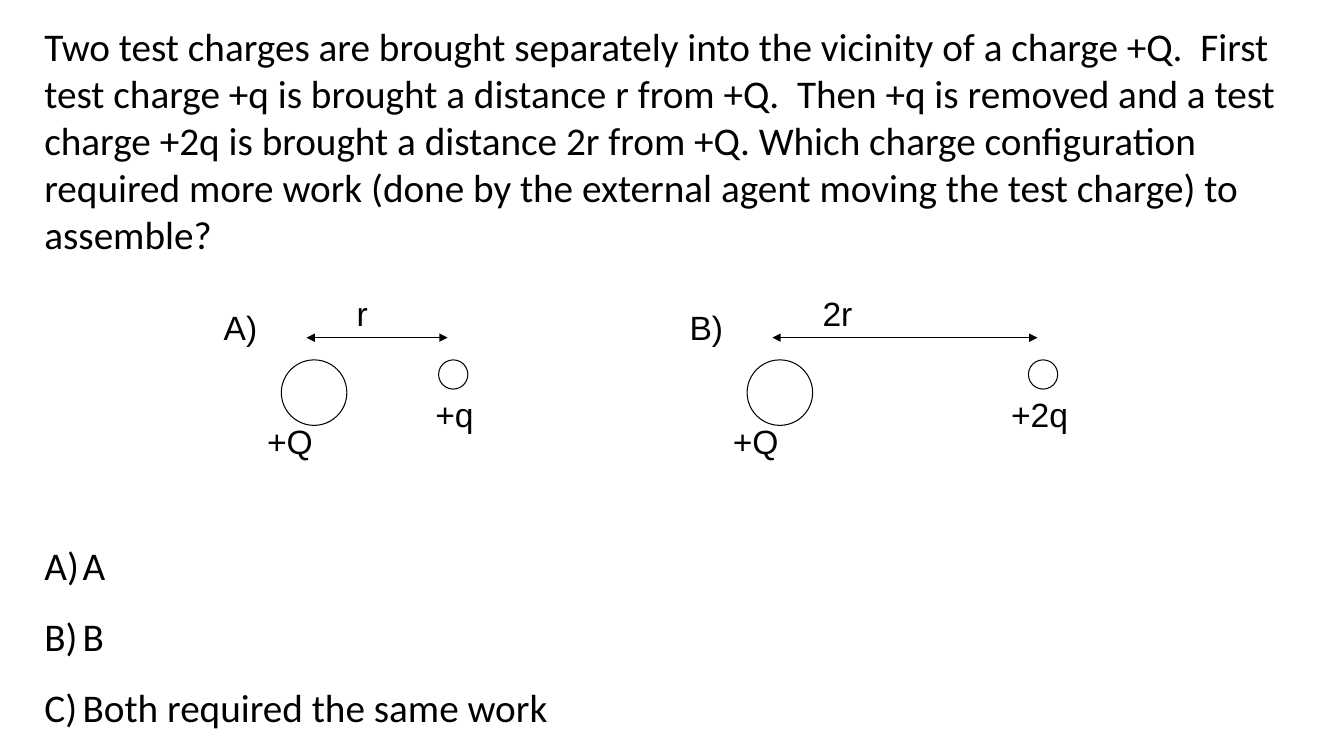
from lxml.etree import SubElement
from pptx import Presentation
from pptx.dml.color import RGBColor
from pptx.enum.shapes import MSO_CONNECTOR as Connector, MSO_SHAPE as Preset
from pptx.enum.text import MSO_ANCHOR as Anchor, MSO_AUTO_SIZE as AutoSize, PP_ALIGN as Align
from pptx.oxml.ns import qn
from pptx.util import Inches, Pt

COLORS = {"ink": "000000", "paper": "FFFFFF"}
QUESTION = (
    "Two test charges are brought separately into the vicinity of a charge +Q.  "
    "First test charge +q is brought a distance r from +Q.  Then +q is removed and "
    "a test charge +2q is brought a distance 2r from +Q. Which charge configuration "
    "required more work (done by the external agent moving the test charge) to assemble?"
)
ANSWERS = ["A", "B", "Both required the same work"]


def color(name):
    return RGBColor.from_string(COLORS[name])


def place(shape, left, top, width, height):
    shape.left, shape.top = Inches(left), Inches(top)
    shape.width, shape.height = Inches(width), Inches(height)


def write(paragraph, text, size, font):
    run = paragraph.add_run()
    run.text = text
    run.font.size = Pt(size)
    run.font.name = font
    run.font.color.rgb = color("ink")


def prepare_frame(shape):
    frame = shape.text_frame
    frame.word_wrap = True
    frame.auto_size = AutoSize.NONE
    frame.vertical_anchor = Anchor.TOP
    return frame


def add_label(group, text, left, top, width, height):
    box = group.shapes.add_textbox(Inches(left), Inches(top), Inches(width), Inches(height))
    write(prepare_frame(box).paragraphs[0], text, 24, "Arial")


def add_charge(group, left, top, diameter):
    circle = group.shapes.add_shape(
        Preset.OVAL, Inches(left), Inches(top), Inches(diameter), Inches(diameter))
    circle.shadow.inherit = False
    circle.fill.solid()
    circle.fill.fore_color.rgb = color("paper")
    circle.line.color.rgb = color("ink")
    circle.line.width = Pt(0.75)


def add_distance_arrow(group, start, end, y):
    arrow = group.shapes.add_connector(
        Connector.STRAIGHT, Inches(start), Inches(y), Inches(end), Inches(y))
    arrow.line.color.rgb = color("ink")
    arrow.line.width = Pt(0.75)
    line = arrow.line._get_or_add_ln()
    for tag in ("a:headEnd", "a:tailEnd"):
        SubElement(line, qn(tag), type="triangle")
    SubElement(arrow._element.spPr, qn("a:effectLst"))


# Question across the top
def add_question(slide, left, top, width, height):
    title = slide.shapes.title
    place(title, left, top, width, height)
    paragraph = prepare_frame(title).paragraphs[0]
    paragraph.alignment = Align.LEFT
    write(paragraph, QUESTION, 28, "Calibri")


# One configuration: a fixed charge +Q and a test charge to its right
def add_configuration(slide, left, top, name, distance, charge, test_offset, label_shift, label_width):
    group = slide.shapes.add_group_shape()
    charge_top = top + 0.71
    test_left = left + test_offset
    add_charge(group, left, charge_top, 0.65)
    add_charge(group, test_left, charge_top, 0.29)
    add_label(group, "+Q", left - 0.24, top + 1.27, 1.11, 0.62)
    add_label(group, charge, test_left - label_shift, top + 1, label_width, 0.71)
    add_distance_arrow(group, left + 0.25, test_left + 0.09, top + 0.49)
    add_label(group, distance, left + 0.65, top, 0.94, 0.71)
    add_label(group, name, left - 0.67, top + 0.14, 1.11, 0.62)


# Lettered answers
def add_answers(slide, left, top, width, height):
    body = slide.placeholders[1]
    place(body, left, top, width, height)
    frame = prepare_frame(body)
    frame.word_wrap = False
    for index, answer in enumerate(ANSWERS):
        paragraph = frame.add_paragraph() if index else frame.paragraphs[0]
        paragraph.line_spacing = 1.5
        paragraph.space_before = Pt(0)
        properties = paragraph._p.get_or_add_pPr()
        properties.set("marL", str(Inches(0.38)))
        properties.set("indent", str(Inches(-0.38)))
        SubElement(properties, qn("a:buFont"), typeface="+mj-lt")
        SubElement(properties, qn("a:buAutoNum"), type="alphaUcParenR")
        write(paragraph, answer, 28, "Calibri")


def main():
    presentation = Presentation()
    presentation.slide_width, presentation.slide_height = Inches(13.33), Inches(7.5)
    slide = presentation.slides.add_slide(presentation.slide_layouts[1])
    add_question(slide, 0.34, 0.17, 12.63, 2.46)
    add_configuration(slide, 2.79, 2.86, "A)", "r", "+q", 1.56, 0.13, 0.94)
    add_configuration(slide, 7.41, 2.86, "B)", "2r", "+2q", 2.79, 0.27, 1.2)
    add_answers(slide, 0.34, 5.09, 5.24, 2.22)
    presentation.save("out.pptx")


if __name__ == "__main__":
    main()
